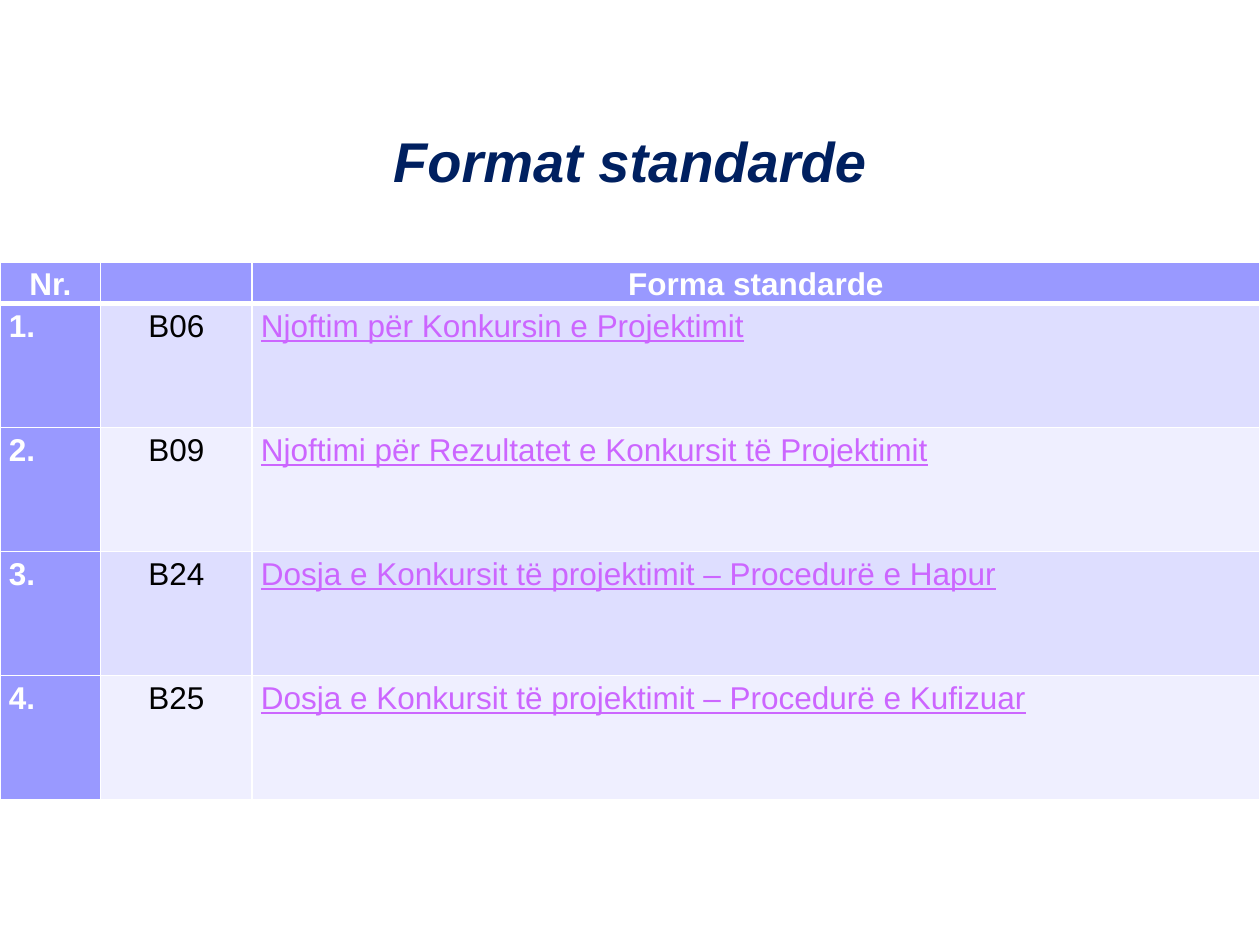
from dataclasses import dataclass

from lxml import etree
from pptx import Presentation, table as tbl
from pptx import util as u
from pptx.dml.color import RGBColor
from pptx.enum import text
from pptx.oxml import ns

COLORS = {
    "navy": "002060",
    "violet": "9999FF",
    "lilac": "DEDEFF",
    "pale": "EFEFFF",
    "link": "CC66FF",
    "white": "FFFFFF",
    "black": "000000",
}
FONT = "Arial"
COLUMN_WIDTHS = (2.03, 3.05, 20.32)
HEADER_HEIGHT, FORM_HEIGHT = 0.84, 2.5
THIN, THICK = 1, 3
CENTER, LEFT = text.PP_ALIGN.CENTER, text.PP_ALIGN.LEFT


@dataclass(frozen=True)
class Form:
    code: str
    title: str


@dataclass(frozen=True)
class Style:
    fill: str
    color: str
    align: text.PP_ALIGN = LEFT
    bold: bool = False
    underline: bool = False
    top: int = THIN
    bottom: int = THIN


FORMS = (
    Form("B06", "Njoftim për Konkursin e Projektimit"),
    Form("B09", "Njoftimi për Rezultatet e Konkursit të Projektimit"),
    Form("B24", "Dosja e Konkursit të projektimit – Procedurë e Hapur"),
    Form("B25", "Dosja e Konkursit të projektimit – Procedurë e Kufizuar"),
)


def add_border(cell: tbl._Cell, side: str, points: int) -> None:
    properties = cell._tc.get_or_add_tcPr()
    line = etree.SubElement(properties, ns.qn(f"a:ln{side}"), w=str(u.Pt(points)))
    fill = etree.SubElement(line, ns.qn("a:solidFill"))
    etree.SubElement(fill, ns.qn("a:srgbClr"), val=COLORS["white"])


def fill_cell(cell: tbl._Cell, content: str, style: Style) -> None:
    for side, points in zip("LRTB", (THIN, THIN, style.top, style.bottom)):
        add_border(cell, side, points)
    cell.fill.solid()
    cell.fill.fore_color.rgb = RGBColor.from_string(COLORS[style.fill])
    cell.margin_left = cell.margin_right = u.Cm(0.18)
    cell.margin_top = cell.margin_bottom = 0
    if not content:
        return
    paragraph = cell.text_frame.paragraphs[0]
    paragraph.alignment = style.align
    paragraph.line_spacing = 1.15
    run = paragraph.add_run()
    run.text = content
    run.font.name = FONT
    run.font.size = u.Pt(18)
    run.font.bold = style.bold
    run.font.underline = style.underline
    run.font.color.rgb = RGBColor.from_string(COLORS[style.color])


def add_heading(slide, content: str) -> None:
    heading = slide.shapes.title
    heading.left, heading.top = u.Cm(1.3), u.Cm(1.4)
    heading.width, heading.height = u.Cm(22.8), u.Cm(2.64)
    frame = heading.text_frame
    frame.vertical_anchor = text.MSO_ANCHOR.BOTTOM
    frame.auto_size = text.MSO_AUTO_SIZE.NONE
    paragraph = frame.paragraphs[0]
    paragraph.alignment = CENTER
    run = paragraph.add_run()
    run.text = content
    run.font.name = FONT
    run.font.size = u.Pt(32)
    run.font.bold = run.font.italic = True
    run.font.color.rgb = RGBColor.from_string(COLORS["navy"])


def add_form_table(slide, forms: tuple[Form, ...]) -> None:
    heights = [HEADER_HEIGHT] + [FORM_HEIGHT] * len(forms)
    grid = slide.shapes.add_table(
        len(heights), len(COLUMN_WIDTHS), 0, u.Cm(5.28),
        u.Cm(sum(COLUMN_WIDTHS)), u.Cm(sum(heights)),
    ).table
    for column, width in zip(grid.columns, COLUMN_WIDTHS):
        column.width = u.Cm(width)
    for row, height in zip(grid.rows, heights):
        row.height = u.Cm(height)

    header = Style("violet", "white", CENTER, bold=True, bottom=THICK)
    for column, label in enumerate(("Nr.", "", "Forma standarde")):
        fill_cell(grid.cell(0, column), label, header)

    for number, form in enumerate(forms, start=1):
        band = "lilac" if number % 2 else "pale"
        top = THICK if number == 1 else THIN
        entries = (
            (f"{number}.", Style("violet", "white", bold=True, top=top)),
            (form.code, Style(band, "black", CENTER, top=top)),
            (form.title, Style(band, "link", underline=True, top=top)),
        )
        for column, (content, style) in enumerate(entries):
            fill_cell(grid.cell(number, column), content, style)


def main() -> None:
    deck = Presentation()
    deck.slide_width, deck.slide_height = u.Cm(25.4), u.Cm(19.05)
    slide = deck.slides.add_slide(deck.slide_layouts[5])
    add_heading(slide, "Format standarde")
    add_form_table(slide, FORMS)
    deck.save("out.pptx")


if __name__ == "__main__":
    main()
